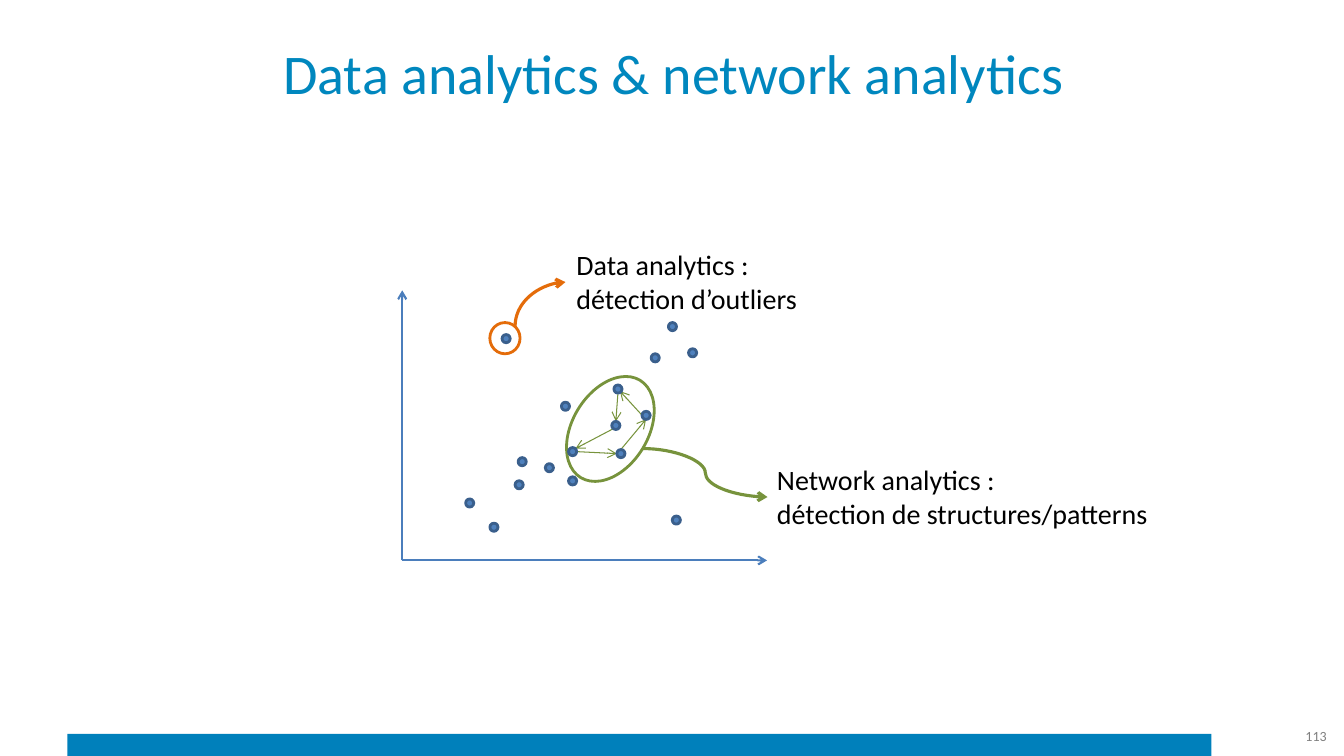
from dataclasses import dataclass

from lxml.etree import SubElement
from pptx import Presentation
from pptx.dml.color import RGBColor
from pptx.enum.shapes import MSO_CONNECTOR, MSO_SHAPE
from pptx.enum.text import MSO_ANCHOR, MSO_AUTO_SIZE, PP_ALIGN
from pptx.oxml.ns import qn
from pptx.shapes.autoshape import Shape
from pptx.shapes.connector import Connector
from pptx.slide import Slide
from pptx.util import Pt

TITLE = RGBColor(0x00, 0x87, 0xBE)
BAR = RGBColor(0x00, 0x80, 0xBB)
AXIS = RGBColor(0x4B, 0x7E, 0xBC)
DOT = RGBColor(0x4F, 0x81, 0xBD)
EDGE = RGBColor(0x3A, 0x5F, 0x8C)
ORANGE = RGBColor(0xE4, 0x6C, 0x0A)
GREEN = RGBColor(0x77, 0x93, 0x3C)
BLACK = RGBColor(0x00, 0x00, 0x00)
GRAY = RGBColor(0x80, 0x80, 0x80)
FONT = "Calibri"
SIZE = 5.8


@dataclass
class Box:
    """A frame in points."""
    left: float
    top: float
    width: float
    height: float


@dataclass
class Arrow:
    """A line in points with its head at the second end."""
    start: tuple[float, float]
    end: tuple[float, float]
    color: RGBColor
    weight: float
    kind: MSO_CONNECTOR = MSO_CONNECTOR.STRAIGHT


@dataclass
class Label:
    """A text with its frame and look."""
    text: str
    box: Box
    size: float = 20
    color: RGBColor = BLACK
    align: PP_ALIGN = PP_ALIGN.LEFT


AXES = [
    Arrow((287.3, 400.3), (287.3, 207.4), AXIS, 1.5),
    Arrow((287.3, 400.3), (547.9, 400.3), AXIS, 1.5),
]
LINKS = [
    Arrow((458.6, 296.6), (442.8, 279.4), GREEN, 0.75),
    Arrow((411.8, 322.6), (440.6, 324), GREEN, 0.75),
    Arrow((443.5, 321.1), (461.5, 299.5), GREEN, 0.75),
    Arrow((441.4, 280.8), (439.9, 301), GREEN, 0.75),
    Arrow((438.5, 306), (411.1, 320.4), GREEN, 0.75),
]
BEND = Arrow((401.8, 235.4), (370.1, 199.4), ORANGE, 2.25, MSO_CONNECTOR.CURVE)
WAVE = Arrow((459.4, 320.4), (548.2, 355), GREEN, 2.25, MSO_CONNECTOR.CURVE)
LONE = [
    (332.6, 356.4), (370.1, 326.9), (349.9, 373.7), (367.9, 343.4),
    (406.1, 340.6), (389.5, 331.2), (401, 287.3), (477.4, 230.4),
    (480.2, 368.6), (358.6, 239),
]
FRONT = [
    (465.1, 252.7), (458.6, 293.8), (491.8, 249.1), (406.1, 319.7),
    (440.6, 321.1), (437, 301), (438.5, 275),
]
LABELS = [
    Label("Data analytics :\vdétection d’outliers", Box(404.6, 173.5, 178.6, 55.4)),
    Label("Network analytics :\ndétection de structures/patterns",
          Box(547.9, 326.9, 283, 55.4)),
    Label("113", Box(876.2, 511.2, 78.5, 28.8), 10, GRAY, PP_ALIGN.RIGHT),
]


def place(shape: Shape, box: Box) -> None:
    """Move a shape to a frame."""
    shape.left, shape.top = Pt(box.left), Pt(box.top)
    shape.width, shape.height = Pt(box.width), Pt(box.height)


def style(shape: Shape, size: float, color: RGBColor, align: PP_ALIGN) -> None:
    """Format all text of a shape."""
    for para in shape.text_frame.paragraphs:
        para.alignment = align
        for run in para.runs:
            run.font.name = FONT
            run.font.size = Pt(size)
            run.font.color.rgb = color


def draw_oval(slide: Slide, box: Box, edge: RGBColor, fill: RGBColor | None = None) -> Shape:
    """Draw an outlined ellipse."""
    oval = slide.shapes.add_shape(MSO_SHAPE.OVAL, 0, 0, 0, 0)
    place(oval, box)
    oval.shadow.inherit = False
    if fill is None:
        oval.fill.background()
    else:
        oval.fill.solid()
        oval.fill.fore_color.rgb = fill
    oval.line.color.rgb = edge
    oval.line.width = Pt(2)
    return oval


def draw_dots(slide: Slide, spots: list[tuple[float, float]]) -> None:
    """Draw data points."""
    for left, top in spots:
        draw_oval(slide, Box(left, top, SIZE, SIZE), EDGE, DOT)


def draw_arrow(slide: Slide, arrow: Arrow) -> Connector:
    """Draw a line with an open head."""
    ends = [Pt(val) for val in (*arrow.start, *arrow.end)]
    line = slide.shapes.add_connector(arrow.kind, *ends)
    line.line.color.rgb = arrow.color
    line.line.width = Pt(arrow.weight)
    SubElement(line.line._get_or_add_ln(), qn("a:tailEnd"), type="arrow")
    SubElement(line._element.spPr, qn("a:effectLst"))
    return line


def draw_label(slide: Slide, label: Label) -> None:
    """Draw a text box."""
    shape = slide.shapes.add_textbox(0, 0, 0, 0)
    frame = shape.text_frame
    frame.text = label.text
    if label.align == PP_ALIGN.LEFT:
        frame.word_wrap = False
        frame.auto_size = MSO_AUTO_SIZE.SHAPE_TO_FIT_TEXT
    else:
        frame.word_wrap = True
        frame.vertical_anchor = MSO_ANCHOR.MIDDLE
    place(shape, label.box)
    style(shape, label.size, label.color, label.align)


def draw_frame(slide: Slide) -> None:
    """Draw the foot bar and the title."""
    bar = slide.shapes.add_shape(MSO_SHAPE.RECTANGLE, 0, 0, 0, 0)
    place(bar, Box(48.2, 524.2, 817.2, 15.8))
    bar.shadow.inherit = False
    bar.fill.solid()
    bar.fill.fore_color.rgb = BAR
    bar.line.fill.background()
    title = slide.shapes.title
    place(title, Box(49, 15.1, 864, 72.7))
    title.text_frame.text = "Data analytics & network analytics"
    title.text_frame.vertical_anchor = MSO_ANCHOR.MIDDLE
    style(title, 40, TITLE, PP_ALIGN.CENTER)


def main() -> None:
    """Build and save the slide."""
    deck = Presentation()
    deck.slide_width, deck.slide_height = Pt(960), Pt(540)
    slide = deck.slides.add_slide(deck.slide_layouts[5])
    draw_frame(slide)
    for axis in AXES:
        draw_arrow(slide, axis)
    draw_dots(slide, LONE)
    draw_oval(slide, Box(349.9, 230.4, 21.6, 22.3), ORANGE)
    bend = draw_arrow(slide, BEND)._element.spPr
    bend.find(qn("a:xfrm")).set("rot", "5400000")
    bend.find(qn("a:prstGeom")).set("prst", "curvedConnector2")
    for link in LINKS:
        draw_arrow(slide, link)
    draw_oval(slide, Box(409, 265.7, 54, 81.4), GREEN).rotation = 31.4
    draw_arrow(slide, WAVE)
    draw_dots(slide, FRONT)
    for label in LABELS:
        draw_label(slide, label)
    deck.save("out.pptx")


if __name__ == "__main__":
    main()
